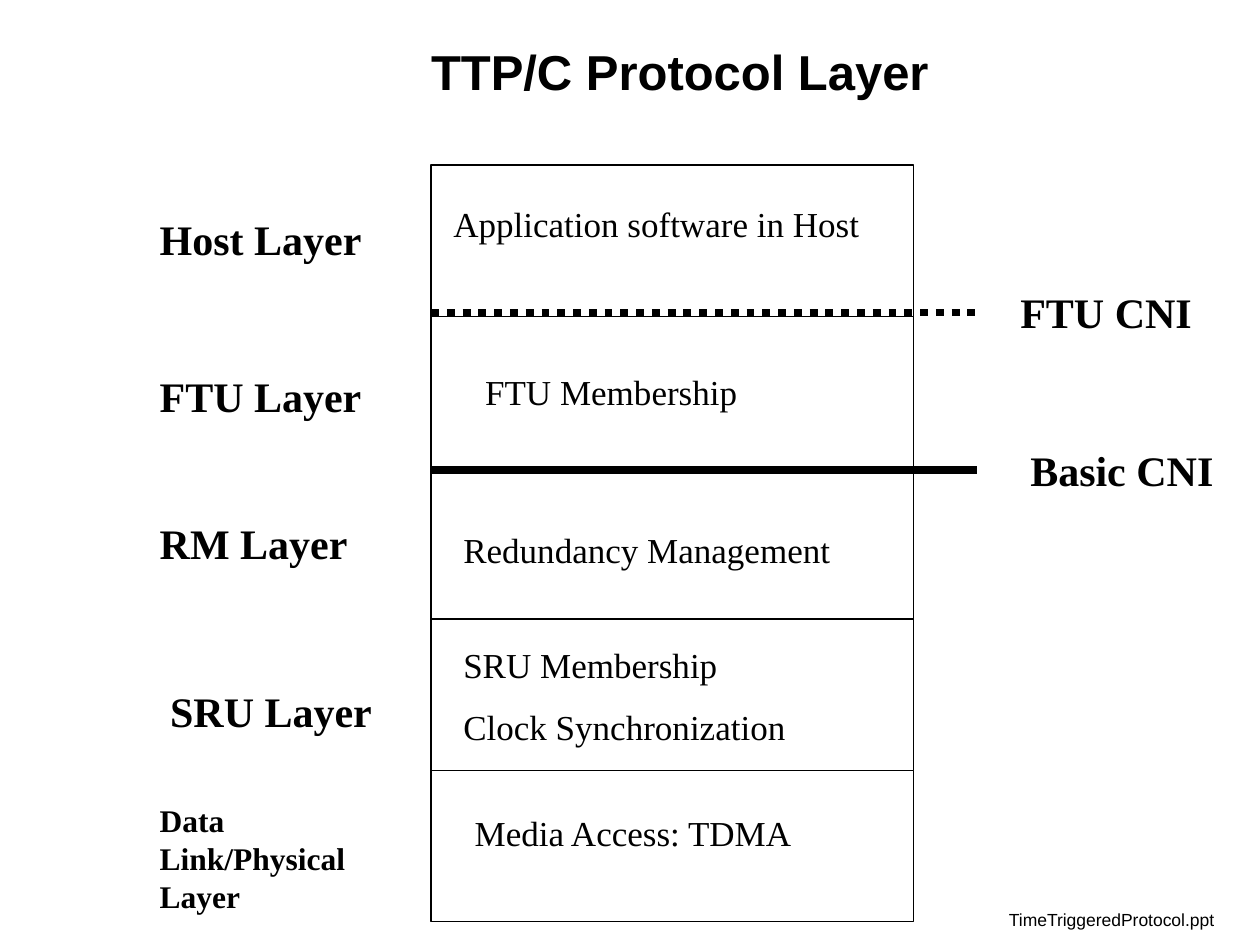
from dataclasses import dataclass

from lxml import etree
from pptx import Presentation
from pptx.dml.color import RGBColor
from pptx.enum import dml, shapes, text
from pptx.oxml import ns
from pptx.util import Cm, Pt


@dataclass(frozen=True)
class Theme:
    ink: RGBColor = RGBColor(0, 0, 0)
    paper: RGBColor = RGBColor(255, 255, 255)
    serif: str = "Times New Roman"
    sans: str = "Arial"
    title: int = 28
    label: int = 24
    body: int = 20
    small_label: int = 18
    footer: int = 10
    border: float = 0.75
    interface: float = 4.5


THEME = Theme()

STACK_LEFT, STACK_TOP = 8.69, 3.33
STACK_WIDTH, LAYER_HEIGHT = 9.73, 3.05
INTERFACE_END = 19.69
LABEL_WIDTH, LABEL_HEIGHT = 4.88, 1.27

# Contents of each layer: left, top, width, height, lines
CONTENTS = [
    (8.89, 3.96, 9.32, 1.09, ["Application software in Host"]),
    (9.53, 7.34, 8.46, 1.09, ["FTU Membership"]),
    (9.09, 10.52, 8.46, 1.09, ["Redundancy Management"]),
    (9.09, 12.85, 8.46, 2.36, ["SRU Membership", "Clock Synchronization"]),
    (9.32, 16.23, 8.46, 1.09, ["Media Access: TDMA"]),
]

# Labels beside the stack: left, top, wording
LABELS = [
    (2.97, 4.17, "Host Layer"),
    (2.97, 7.34, "FTU Layer"),
    (2.97, 10.31, "RM Layer"),
    (3.18, 13.69, "SRU Layer"),
    (20.32, 5.66, "FTU CNI"),
    (20.52, 8.84, "Basic CNI"),
]


def write_text(frame, lines, *, size, font=THEME.serif, bold=False,
               align=text.PP_ALIGN.LEFT, wrap=True, gap=0):
    frame.word_wrap = wrap
    frame.auto_size = text.MSO_AUTO_SIZE.NONE
    frame.vertical_anchor = text.MSO_ANCHOR.TOP
    for index, line in enumerate(lines):
        paragraph = frame.add_paragraph() if index else frame.paragraphs[0]
        paragraph.text = line
        paragraph.alignment = align
        paragraph.space_before = Pt(gap if index else 0)
        paragraph.font.name = font
        paragraph.font.size = Pt(size)
        paragraph.font.bold = bold
        paragraph.font.color.rgb = THEME.ink


def add_text(slide, left, top, width, height, lines, **style):
    box = slide.shapes.add_textbox(Cm(left), Cm(top), Cm(width), Cm(height))
    write_text(box.text_frame, lines, **style)


def add_title(slide, wording):
    title = slide.shapes.title
    title.left, title.top = Cm(4.7), Cm(0.71)
    title.width, title.height = Cm(18.01), Cm(2.64)
    write_text(title.text_frame, [wording], size=THEME.title, font=THEME.sans,
               bold=True, align=text.PP_ALIGN.CENTER)


def add_layer(slide, row):
    layer = slide.shapes.add_shape(
        shapes.MSO_SHAPE.RECTANGLE, Cm(STACK_LEFT),
        Cm(STACK_TOP + row * LAYER_HEIGHT), Cm(STACK_WIDTH), Cm(LAYER_HEIGHT))
    layer.shadow.inherit = False
    layer.fill.solid()
    layer.fill.fore_color.rgb = THEME.paper
    layer.line.color.rgb = THEME.ink
    layer.line.width = Pt(THEME.border)


def add_interface(slide, height, dash=None):
    """Draw a thick boundary that runs out past the right of the stack."""
    boundary = slide.shapes.add_connector(
        shapes.MSO_CONNECTOR.STRAIGHT, Cm(STACK_LEFT), Cm(height),
        Cm(INTERFACE_END), Cm(height))
    boundary.line.color.rgb = THEME.ink
    boundary.line.width = Pt(THEME.interface)
    if dash:
        boundary.line.dash_style = dash
    etree.SubElement(boundary._element.spPr, ns.qn("a:effectLst"))


def main():
    deck = Presentation()
    deck.slide_width, deck.slide_height = Cm(25.4), Cm(19.05)
    slide = deck.slides.add_slide(deck.slide_layouts[5])

    add_title(slide, "TTP/C Protocol Layer")
    for row in range(len(CONTENTS)):
        add_layer(slide, row)
    for left, top, width, height, lines in CONTENTS:
        add_text(slide, left, top, width, height, lines,
                 size=THEME.body, gap=11.5)

    add_interface(slide, 6.3, dash=dml.MSO_LINE.ROUND_DOT)
    add_interface(slide, 9.47)

    for left, top, wording in LABELS:
        add_text(slide, left, top, LABEL_WIDTH, LABEL_HEIGHT, [wording],
                 size=THEME.label, bold=True)
    add_text(slide, 2.97, 16.03, LABEL_WIDTH, 2.54,
             ["Data Link/Physical Layer"], size=THEME.small_label, bold=True)
    add_text(slide, 20.09, 18.21, 4.72, 0.69, ["TimeTriggeredProtocol.ppt"],
             size=THEME.footer, font=THEME.sans, wrap=False)

    deck.save("out.pptx")


if __name__ == "__main__":
    main()
